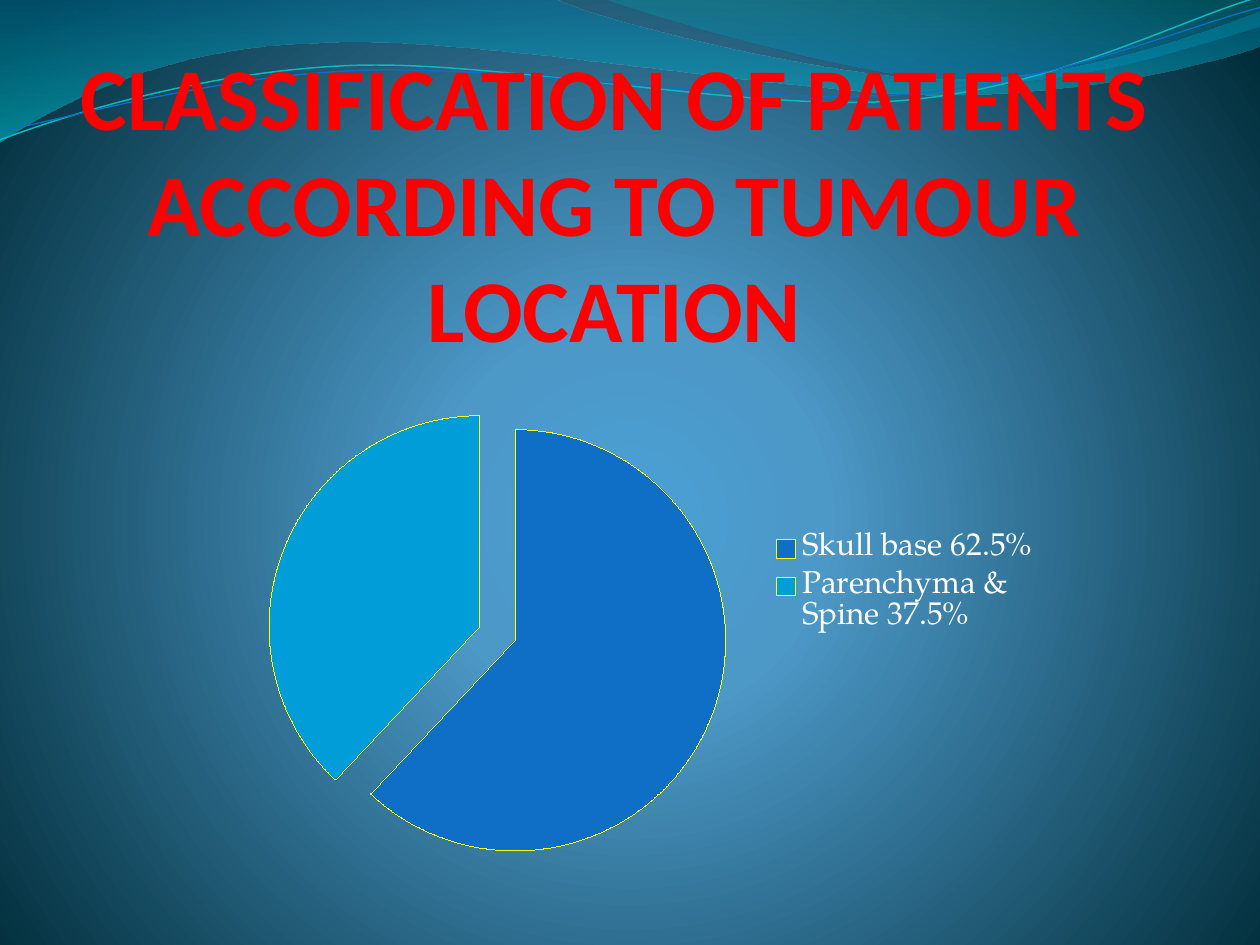
from math import cos, radians, sin

from pptx import Presentation
from pptx.chart.data import CategoryChartData
from pptx.dml.color import RGBColor
from pptx.enum.chart import XL_CHART_TYPE as ChartType, XL_LEGEND_POSITION as LegendPosition
from pptx.enum.text import MSO_ANCHOR as Anchor, MSO_AUTO_SIZE as AutoSize, PP_ALIGN as Align
from pptx.oxml import parse_xml
from pptx.oxml.ns import nsdecls, qn
from pptx.util import Inches, Pt

WIDTH, HEIGHT = 10, 7.5
COLUMNS, ROWS = 10, 7.5
STRAND_TILT = -2.7

RED = RGBColor(0xFF, 0x00, 0x00)
WHITE = RGBColor(0xFF, 0xFF, 0xFF)
YELLOW = RGBColor(0xFF, 0xFF, 0x00)
BLUE = RGBColor(0x0F, 0x6F, 0xC6)
SKY = RGBColor(0x00, 0x9D, 0xD9)
TURQUOISE = RGBColor(0x0A, 0xB8, 0xBF)
GLOW = RGBColor(0x4A, 0xA0, 0xD6)
STEEL = RGBColor(0x4C, 0x98, 0xC7)
MIDNIGHT = RGBColor(0x00, 0x2C, 0x38)
DEEP_BLUE = RGBColor(0x00, 0x74, 0xA1)
AQUA = RGBColor(0x00, 0xC6, 0xCF)
TEAL = RGBColor(0x00, 0xA1, 0xA9)
OCEAN = RGBColor(0x00, 0x8B, 0xBF)

RADIAL = ('<a:path path="circle"><a:fillToRect l="10000" t="110000" '
          'r="10000" b="100000"/></a:path>')
DOWNWARD = '<a:lin ang="5400000" scaled="1"/>'

BANDS = [
    ([[(0, 0)], [(4.4, -0.01)],
      [(4.76, 0.17), (6.64, 0.63), (7.58, 0.63)],
      [(8.53, 0.63), (9.58, 0.26), (10, 0.09)],
      [(10.01, 0.36)],
      [(9.83, 0.44), (8.7, 0.76), (7.46, 0.75)],
      [(6.22, 0.75), (3.82, 0.28), (2.57, 0.34)],
      [(1.29, 0.36), (0.46, 0.83), (-0.01, 1.13)]],
     [(0, DEEP_BLUE, 45), (100, AQUA, 55)]),
    ([[(4.79, -0.01)],
      [(5.09, 0.11), (6.82, 0.62), (7.69, 0.65)],
      [(8.56, 0.69), (9.61, 0.32), (10, 0.21)],
      [(10, 0)]],
     [(0, TEAL, 30), (80, OCEAN, 45)]),
]
STRANDS = [
    ([[(0, 1.11)],
      [(0.48, 0.93), (1.58, 0.57), (2.77, 0.52)],
      [(3.95, 0.47), (5.93, 0.89), (7.13, 0.8)],
      [(8.33, 0.71), (9.38, 0.15), (9.98, -0.02)]],
     (4.99, 0.57), TURQUOISE, 0.85),
    ([[(0, 1.04)],
      [(0.47, 0.96), (1.64, 0.61), (2.83, 0.56)],
      [(4.03, 0.51), (5.97, 0.84), (7.17, 0.75)],
      [(8.36, 0.67), (9.41, 0.21), (10, 0.06)]],
     (5, 0.59), BLUE, 0.75),
]


def apply_gradient(fill, element, stops, direction):
    fill.solid()
    fill.fore_color.rgb = stops[0][1]
    marks = "".join(
        f'<a:gs pos="{share * 1000}"><a:srgbClr val="{color}">'
        f'<a:alpha val="{opacity * 1000}"/></a:srgbClr></a:gs>'
        for share, color, opacity in stops)
    gradient = parse_xml(f'<a:gradFill {nsdecls("a")} rotWithShape="1">'
                         f'<a:gsLst>{marks}</a:gsLst>{direction}</a:gradFill>')
    plain = element.find(".//" + qn("a:solidFill"))
    plain.getparent().replace(plain, gradient)


def turn(point, center, degrees):
    x, y = point[0] - center[0], point[1] - center[1]
    c, s = cos(radians(degrees)), sin(radians(degrees))
    return center[0] + x * c - y * s, center[1] + x * s + y * c


def add_outline(slide, box, segments, close):
    left, top, width, height = box
    placed = [(Inches(left + x * width / COLUMNS), Inches(top + y * height / ROWS))
              for segment in segments for x, y in segment]
    builder = slide.shapes.build_freeform(*placed[0])
    builder.add_line_segments(placed[1:], close=close)
    outline = builder.convert_to_shape()
    outline.shadow.inherit = False
    steps = iter(list(outline.element.iter(qn("a:lnTo"))))
    for segment in segments[1:]:
        group = [next(steps) for _ in segment]
        if len(group) == 3:
            curve = parse_xml(f'<a:cubicBezTo {nsdecls("a")}/>')
            group[0].addprevious(curve)
            for step in group:
                curve.append(step[0])
                step.getparent().remove(step)
    return outline


def add_backdrop(slide, box):
    apply_gradient(slide.background.fill, slide.element,
                   [(0, GLOW, 100), (25, STEEL, 100), (100, MIDNIGHT, 100)], RADIAL)
    for segments, stops in BANDS:
        band = add_outline(slide, box, segments, True)
        band.line.fill.background()
        apply_gradient(band.fill, band.element, stops, DOWNWARD)
    for segments, center, color, weight in STRANDS:
        level = [[turn(point, center, -STRAND_TILT) for point in segment]
                 for segment in segments]
        strand = add_outline(slide, box, level, False)
        strand.rotation = STRAND_TILT
        strand.fill.background()
        strand.line.color.rgb = color
        strand.line.width = Pt(weight)


def add_text(slide, box, text, *, font, size, color, bold=False,
             align=Align.LEFT, anchor=Anchor.TOP, right_inset=0):
    frame = slide.shapes.add_textbox(*map(Inches, box)).text_frame
    frame.word_wrap = True
    frame.auto_size = AutoSize.NONE
    frame.vertical_anchor = anchor
    frame.margin_left = frame.margin_top = frame.margin_bottom = 0
    frame.margin_right = Inches(right_inset)
    paragraph = frame.paragraphs[0]
    paragraph.alignment = align
    run = paragraph.add_run()
    run.text = text
    run.font.name, run.font.size, run.font.bold = font, Pt(size), bold
    run.font.color.rgb = color


def add_heading(slide, box):
    add_text(slide, box, "CLASSIFICATION OF PATIENTS ACCORDING TO TUMOUR LOCATION",
             font="Calibri", size=50.4, color=RED, bold=True,
             align=Align.CENTER, anchor=Anchor.BOTTOM, right_inset=0.02)


def place_plot(chart, x, y, w, h):
    plot_area = chart.element.find(".//" + qn("c:plotArea"))
    for layout in plot_area.findall(qn("c:layout")):
        plot_area.remove(layout)
    shares = "".join(f'<c:{key} val="{value}"/>'
                     for key, value in zip("xywh", (x, y, w, h)))
    plot_area.insert(0, parse_xml(
        f'<c:layout {nsdecls("c")}><c:manualLayout><c:layoutTarget val="inner"/>'
        f'<c:xMode val="edge"/><c:yMode val="edge"/>{shares}</c:manualLayout></c:layout>'))


def add_location_pie(slide, box):
    locations = CategoryChartData()
    locations.categories = ["Skull base 62.5%", "Parenchyma & Spine 37.5%"]
    locations.add_series("Series 1", [62, 38])
    chart = slide.shapes.add_chart(ChartType.PIE, *map(Inches, box), locations).chart
    chart.has_title = False
    chart.font.name, chart.font.size = "TeX Gyre Pagella", Pt(18)
    chart.font.color.rgb = WHITE
    chart.has_legend = True
    chart.legend.position = LegendPosition.RIGHT
    chart.legend.include_in_layout = False
    chart.plots[0].vary_by_categories = True
    patients = chart.plots[0].series[0]
    patients.format.line.color.rgb = YELLOW
    for index, color in enumerate((BLUE, SKY)):
        part = patients.points[index].format
        part.fill.solid()
        part.fill.fore_color.rgb = color
        part.line.color.rgb = YELLOW
    series = chart.element.find(".//" + qn("c:ser"))
    series.find(qn("c:spPr")).addnext(
        parse_xml(f'<c:explosion {nsdecls("c")} val="9"/>'))
    place_plot(chart, 0.065, 0.179, 0.547, 0.821)


def main():
    deck = Presentation()
    deck.slide_width, deck.slide_height = Inches(WIDTH), Inches(HEIGHT)
    slide = deck.slides.add_slide(deck.slide_layouts[6])
    add_backdrop(slide, (0, 0, WIDTH, HEIGHT))
    add_heading(slide, (0.59, 1.55, 8.59, 1.31))
    add_location_pie(slide, (1.69, 2.41, 6.67, 4.44))
    deck.save("out.pptx")


if __name__ == "__main__":
    main()
